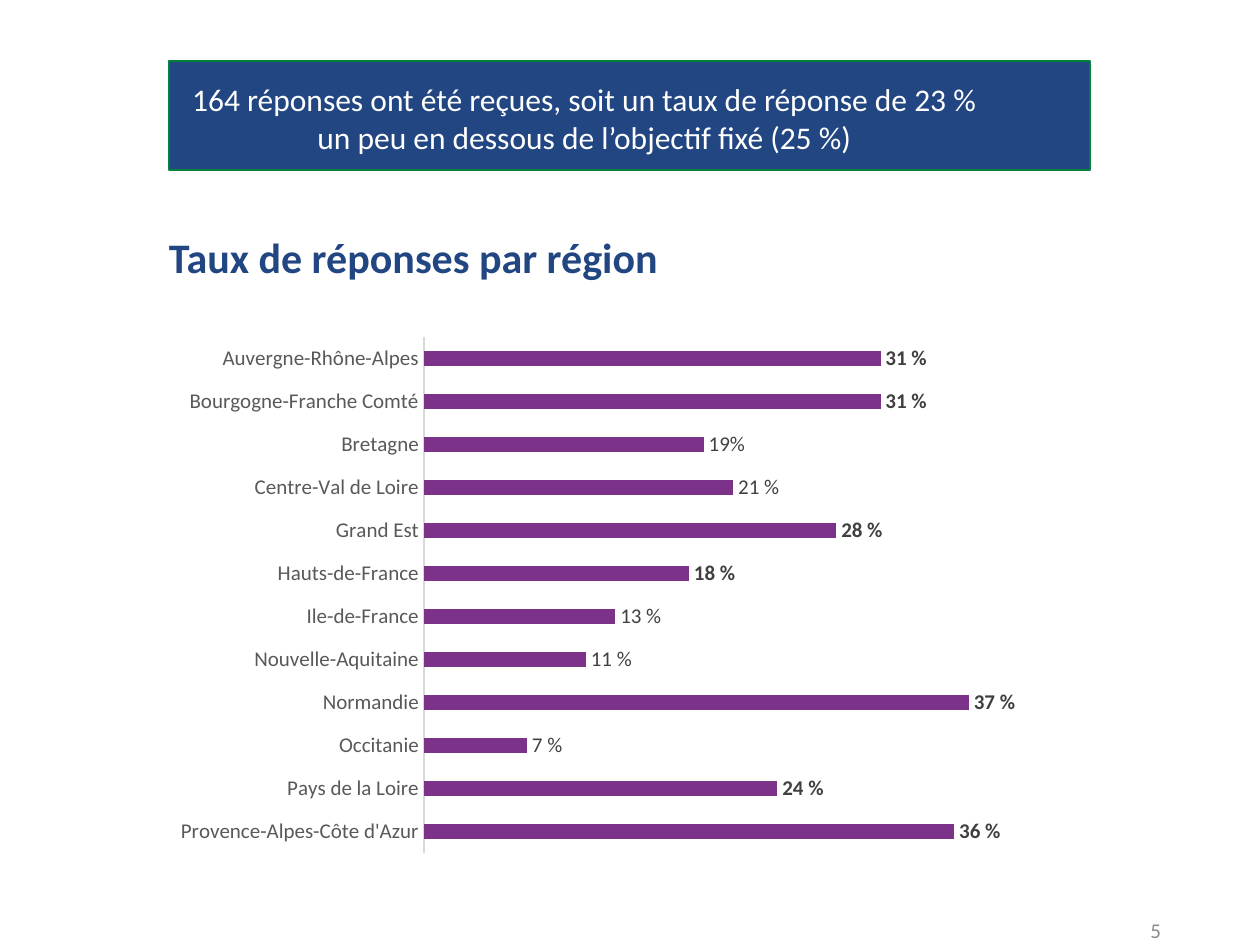
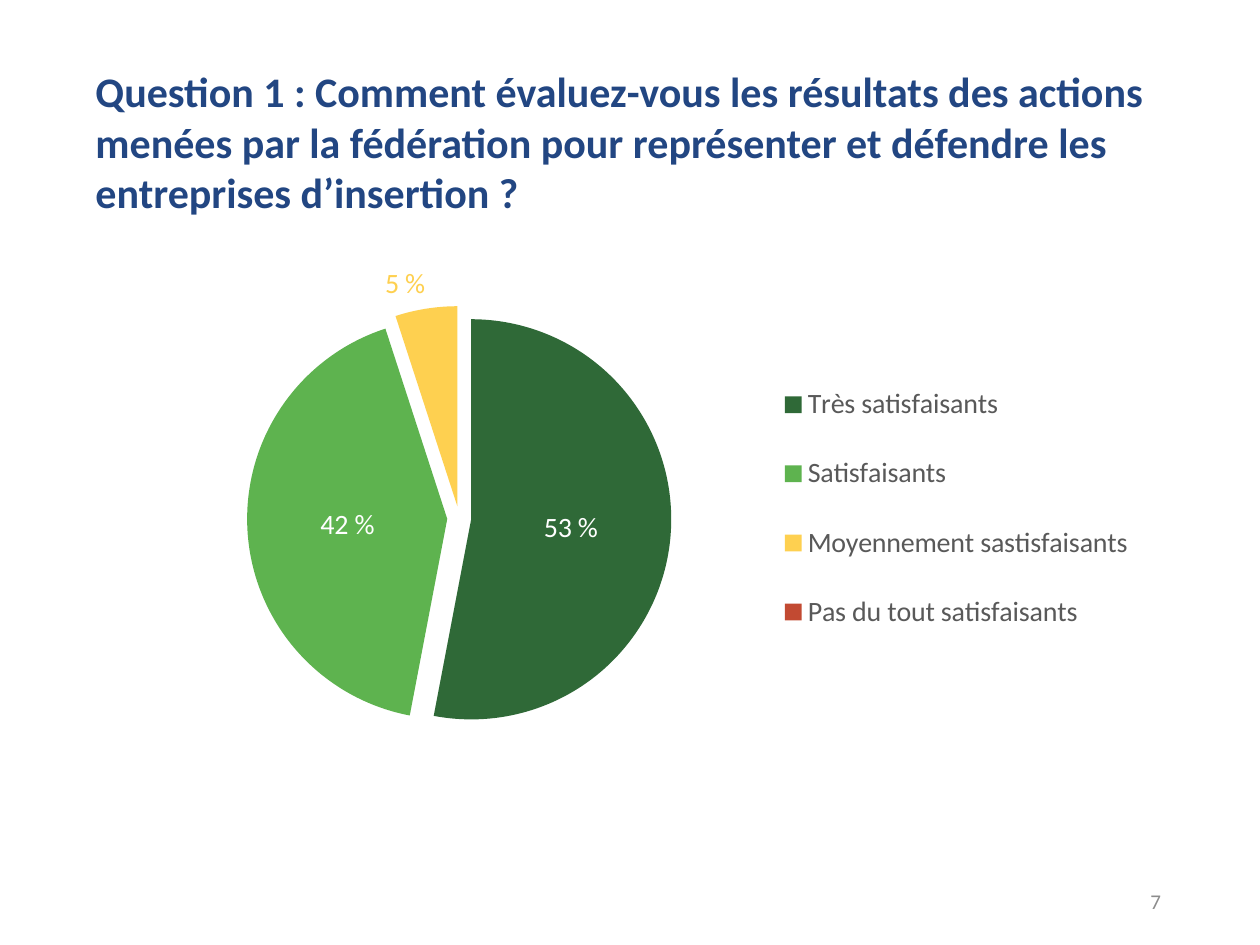
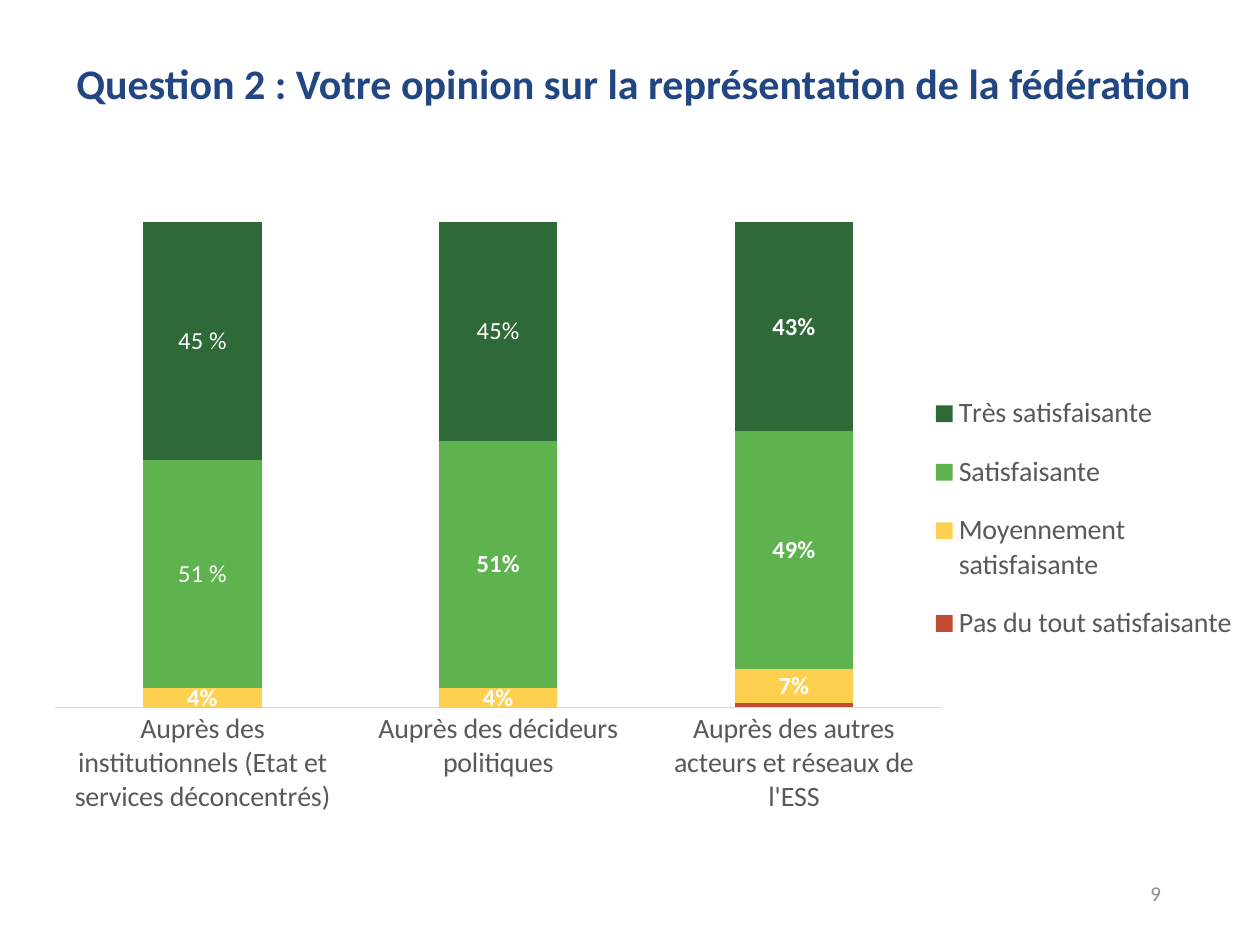
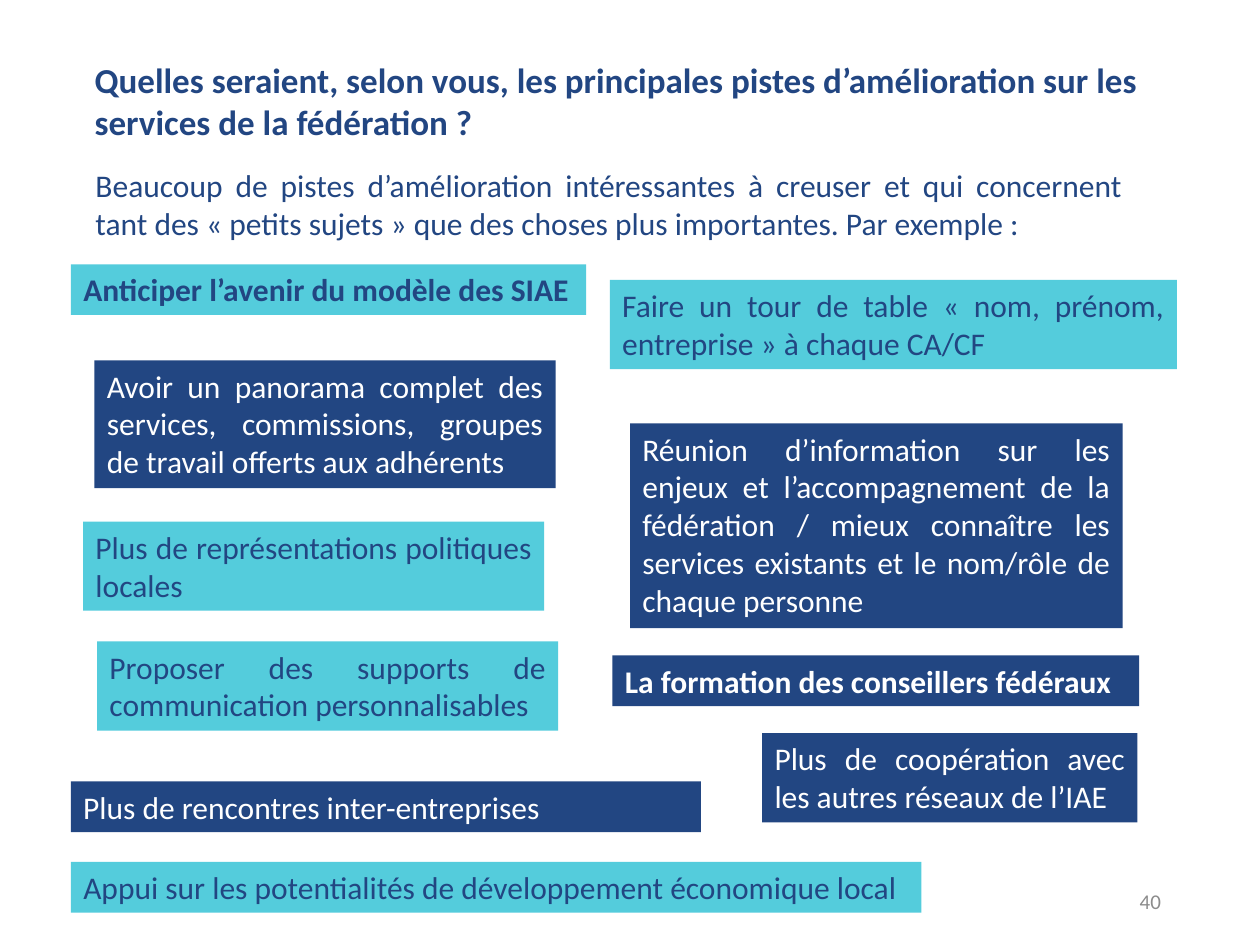
from dataclasses import dataclass

from pptx import Presentation
from pptx.chart.data import CategoryChartData
from pptx.dml.color import RGBColor
from pptx.enum.chart import (XL_CHART_TYPE, XL_LABEL_POSITION, XL_LEGEND_POSITION,
                             XL_TICK_MARK)
from pptx.enum.shapes import MSO_SHAPE
from pptx.enum.text import MSO_ANCHOR, MSO_AUTO_SIZE, PP_ALIGN
from pptx.oxml.ns import qn
from pptx.oxml.xmlchemy import OxmlElement
from pptx.util import Pt

FONT = "Calibri"
NAVY, CYAN, WHITE, BORDER = "224682", "54CCDC", "FFFFFF", "00823B"
PURPLE, GREEN, LIGHT_GREEN, YELLOW, RED = "7D3289", "2F6937", "5EB34F", "FED050", "C24A32"
GREY_TEXT, LABEL_TEXT, NUMBER_TEXT, AXIS_LINE = "595959", "404040", "8C8C8C", "D9D9D9"


@dataclass(frozen=True)
class Area:
    """A rectangle, in points on a page or as fractions of a chart."""
    left: float
    top: float
    width: float
    height: float

    def points(self) -> tuple:
        return Pt(self.left), Pt(self.top), Pt(self.width), Pt(self.height)


@dataclass(frozen=True)
class Style:
    size: float
    color: str
    bold: bool = False


@dataclass(frozen=True)
class Note:
    left: float
    top: float
    width: float
    lines: int
    text: str
    dark: bool = False
    bold: bool = False


@dataclass(frozen=True)
class Region:
    name: str
    rate: float
    label: str
    bold: bool = False


@dataclass(frozen=True)
class Rating:
    name: str
    color: str
    values: tuple
    labels: tuple = ()


TITLE = Style(24, NAVY, True)
AXIS_SMALL, AXIS_LARGE = Style(12, GREY_TEXT), Style(16, GREY_TEXT)

REGIONS = [
    Region("Auvergne-Rhône-Alpes", 0.31, "31 %", True),
    Region("Bourgogne-Franche Comté", 0.31, "31 %", True),
    Region("Bretagne", 0.19, "19%"),
    Region("Centre-Val de Loire", 0.21, "21 %"),
    Region("Grand Est", 0.28, "28 %", True),
    Region("Hauts-de-France", 0.18, "18 %", True),
    Region("Ile-de-France", 0.13, "13 %"),
    Region("Nouvelle-Aquitaine", 0.11, "11 %"),
    Region("Normandie", 0.37, "37 %", True),
    Region("Occitanie", 0.07, "7 %"),
    Region("Pays de la Loire", 0.24, "24 %", True),
    Region("Provence-Alpes-Côte d'Azur", 0.36, "36 %", True),
]

RESULTS = [
    Rating("Très satisfaisants", GREEN, (0.53,), ("53 %",)),
    Rating("Satisfaisants", LIGHT_GREEN, (0.42,), ("42 %",)),
    Rating("Moyennement sastisfaisants", YELLOW, (0.05,), ("5 %",)),
    Rating("Pas du tout satisfaisants", RED, (None,)),
]

AUDIENCES = [
    "Auprès des institutionnels (Etat et services déconcentrés)",
    "Auprès des décideurs politiques",
    "Auprès des autres acteurs et réseaux de l'ESS",
]
OPINIONS = [
    Rating("Pas du tout satisfaisante", RED, (0, 0, 0.01)),
    Rating("Moyennement satisfaisante", YELLOW, (0.04, 0.04, 0.07)),
    Rating("Satisfaisante", LIGHT_GREEN, (0.47, 0.51, 0.49), ("51 %",)),
    Rating("Très satisfaisante", GREEN, (0.49, 0.45, 0.43), ("45 %", "45%")),
]

NOTES = [
    Note(54, 206, 263.5, 3, "Avoir un panorama complet des services, commissions, "
         "groupes de travail offerts aux adhérents", dark=True),
    Note(348.5, 160, 324, 2, "Faire un tour de table « nom, prénom, entreprise » "
         "à chaque CA/CF"),
    Note(40.5, 446.5, 360, 1, "Plus de rencontres inter-entreprises", dark=True),
    Note(40.5, 151, 294.5, 1, "Anticiper l’avenir du modèle des SIAE", bold=True),
    Note(47.5, 298, 263.5, 2, "Plus de représentations politiques locales"),
    Note(360, 242, 281.5, 5, "Réunion d’information sur les enjeux et l’accompagnement "
         "de la fédération / mieux connaître les services existants et le nom/rôle "
         "de chaque personne", dark=True),
    Note(435.5, 419, 214.5, 2, "Plus de coopération avec les autres réseaux de l’IAE",
         dark=True),
    Note(350, 374.5, 301, 1, "La formation des conseillers fédéraux", dark=True, bold=True),
    Note(55.5, 366.5, 263.5, 2, "Proposer des supports de communication personnalisables"),
    Note(40.5, 492.5, 486, 1, "Appui sur les potentialités de développement économique local"),
]


def rgb(color: str) -> RGBColor:
    return RGBColor.from_string(color)


def set_font(font, style: Style) -> None:
    font.name = FONT
    font.size = Pt(style.size)
    font.bold = style.bold
    font.color.rgb = rgb(style.color)


def fill_solid(fill, color: str) -> None:
    fill.solid()
    fill.fore_color.rgb = rgb(color)


def write(box, text: str, style: Style, align=PP_ALIGN.LEFT, anchor=MSO_ANCHOR.TOP,
          grow: bool = True, wrap: bool = True) -> None:
    frame = box.text_frame
    frame.word_wrap = wrap
    frame.vertical_anchor = anchor
    frame.auto_size = MSO_AUTO_SIZE.SHAPE_TO_FIT_TEXT if grow else MSO_AUTO_SIZE.NONE
    para = frame.paragraphs[0]
    para.alignment = align
    span = para.add_run()
    span.text = text
    set_font(span.font, style)


def add_text(page, area: Area, text: str, style: Style, **options) -> None:
    write(page.shapes.add_textbox(*area.points()), text, style, **options)


def add_band(page, area: Area, color: str, border: str = ""):
    band = page.shapes.add_shape(MSO_SHAPE.RECTANGLE, *area.points())
    band.shadow.inherit = False
    fill_solid(band.fill, color)
    if border:
        band.line.color.rgb = rgb(border)
        band.line.width = Pt(1)
    else:
        band.line.fill.background()
    return band


def add_page_number(page, number: int, top: float) -> None:
    add_text(page, Area(508.5, top, 162, 29), str(number), Style(12, NUMBER_TEXT),
             align=PP_ALIGN.RIGHT, anchor=MSO_ANCHOR.MIDDLE, grow=False)


def make_layout(area: Area, inner: bool):
    """Build the manual layout element of a plot area or a legend."""
    layout = OxmlElement("c:layout")
    manual = OxmlElement("c:manualLayout")
    layout.append(manual)
    settings = [("layoutTarget", "inner")] if inner else []
    settings += [("xMode", "edge"), ("yMode", "edge"), ("x", area.left), ("y", area.top),
                 ("w", area.width), ("h", area.height)]
    for name, value in settings:
        setting = OxmlElement(f"c:{name}")
        setting.set("val", str(value))
        manual.append(setting)
    return layout


def add_chart(page, kind, area: Area, plot_area: Area, categories: list, series: list):
    data = CategoryChartData(number_format="0%")
    data.categories = categories
    for name, values in series:
        data.add_series(name, values)
    chart = page.shapes.add_chart(kind, *area.points(), data).chart
    chart.has_title = False
    chart.has_legend = False
    set_font(chart.font, Style(10, "000000"))
    plot_element = chart._chartSpace.chart.plotArea
    for layout in plot_element.findall(qn("c:layout")):
        plot_element.remove(layout)
    plot_element.insert(0, make_layout(plot_area, inner=True))
    return chart


def add_legend(chart, area: Area) -> None:
    chart.has_legend = True
    legend = chart.legend
    legend.position = XL_LEGEND_POSITION.RIGHT
    legend.include_in_layout = False
    set_font(legend.font, AXIS_LARGE)
    element = legend._element
    for layout in element.findall(qn("c:layout")):
        element.remove(layout)
    element.find(qn("c:legendPos")).addnext(make_layout(area, inner=False))


def style_axes(chart, style: Style) -> None:
    axis = chart.category_axis
    axis.major_tick_mark = axis.minor_tick_mark = XL_TICK_MARK.NONE
    axis.format.line.color.rgb = rgb(AXIS_LINE)
    axis.format.line.width = Pt(0.75)
    set_font(axis.tick_labels.font, style)
    chart.value_axis.has_major_gridlines = False
    chart.value_axis.visible = False


def show_values(series, style: Style, position) -> None:
    labels = series.data_labels
    labels.show_value = True
    labels.number_format = "0%"
    labels.number_format_is_linked = False
    labels.position = position
    set_font(labels.font, style)


def label_point(point, text: str, style: Style, position) -> None:
    label = point.data_label
    span = label.text_frame.paragraphs[0].add_run()
    span.text = text
    set_font(span.font, style)
    label.position = position


def build_region_page(page) -> None:
    add_band(page, Area(96.5, 35, 526.5, 62), NAVY, BORDER)
    regions = REGIONS[::-1]
    chart = add_chart(page, XL_CHART_TYPE.BAR_CLUSTERED, Area(92, 137.5, 511, 375),
                      Area(0.294, 0.147, 0.659, 0.786), [region.name for region in regions],
                      [("Series 1", [region.rate for region in regions])])
    style_axes(chart, AXIS_SMALL)
    chart.value_axis.minimum_scale = 0
    chart.value_axis.maximum_scale = 0.4
    plot = chart.plots[0]
    plot.gap_width = 192
    plot.vary_by_categories = False
    bars = plot.series[0]
    fill_solid(bars.format.fill, PURPLE)
    show_values(bars, Style(12, LABEL_TEXT), XL_LABEL_POSITION.OUTSIDE_END)
    for index, region in enumerate(regions):
        label_point(bars.points[index], region.label, Style(12, LABEL_TEXT, region.bold),
                    XL_LABEL_POSITION.OUTSIDE_END)
    add_text(page, Area(92, 42, 484, 51),
             "164 réponses ont été reçues, soit un taux de réponse de 23 % "
             "un peu en dessous de l’objectif fixé (25 %)",
             Style(18, WHITE), align=PP_ALIGN.CENTER)
    add_page_number(page, 5, 517)
    add_text(page, Area(89.5, 129, 296.5, 36), "Taux de réponses par région", TITLE, wrap=False)


def build_results_page(page) -> None:
    chart = add_chart(page, XL_CHART_TYPE.PIE, Area(58.5, 67, 602.5, 363.5),
                      Area(0.137, 0.297, 0.403, 0.667), [result.name for result in RESULTS],
                      [("Series 1", [result.values[0] for result in RESULTS])])
    add_legend(chart, Area(0.64, 0.37, 0.34, 0.49))
    pie = chart.plots[0].series[0]
    explosion = OxmlElement("c:explosion")
    explosion.set("val", "6")
    pie._element.find(qn("c:tx")).addnext(explosion)
    show_values(pie, Style(16, WHITE, True), XL_LABEL_POSITION.BEST_FIT)
    for index, result in enumerate(RESULTS):
        point = pie.points[index]
        fill_solid(point.format.fill, result.color)
        small = result.color == YELLOW
        for text in result.labels:
            label_point(point, text, Style(16, YELLOW if small else WHITE),
                        XL_LABEL_POSITION.OUTSIDE_END if small else XL_LABEL_POSITION.CENTER)
    add_page_number(page, 7, 500.5)
    add_text(page, Area(47.5, 34, 623, 94.5),
             "Question 1 : Comment évaluez-vous les résultats des actions menées par la "
             "fédération pour représenter et défendre les entreprises d’insertion ?", TITLE)


def build_opinion_page(page) -> None:
    chart = add_chart(page, XL_CHART_TYPE.COLUMN_STACKED_100, Area(19.5, 111, 693.5, 363.5),
                      Area(0.017, 0.044, 0.731, 0.763), AUDIENCES,
                      [(opinion.name, opinion.values) for opinion in OPINIONS])
    style_axes(chart, AXIS_LARGE)
    add_legend(chart, Area(0.735, 0.28, 0.26, 0.46))
    plot = chart.plots[0]
    plot.gap_width = 150
    plot.overlap = 100
    for series, opinion in zip(plot.series, OPINIONS):
        fill_solid(series.format.fill, opinion.color)
        if opinion.color != RED:
            show_values(series, Style(14, WHITE, True), XL_LABEL_POSITION.CENTER)
        for index, text in enumerate(opinion.labels):
            label_point(series.points[index], text, Style(14, WHITE), XL_LABEL_POSITION.CENTER)
    add_page_number(page, 9, 496)
    add_text(page, Area(36.5, 29.5, 658, 36),
             "Question 2 : Votre opinion sur la représentation de la fédération", TITLE)


def build_ideas_page(page) -> None:
    add_text(page, Area(47, 30, 623.5, 55.5),
             "Quelles seraient, selon vous, les principales pistes d’amélioration sur les "
             "services de la fédération ?", Style(20, NAVY, True))
    add_page_number(page, 40, 500.5)
    add_text(page, Area(47.5, 91.5, 601, 51),
             "Beaucoup de pistes d’amélioration intéressantes à creuser et qui concernent "
             "tant des « petits sujets » que des choses plus importantes. Par exemple :",
             Style(18, NAVY), align=PP_ALIGN.JUSTIFY)
    for note in NOTES:
        area = Area(note.left, note.top, note.width, 7 + 22 * note.lines)
        band = add_band(page, area, NAVY if note.dark else CYAN)
        write(band, note.text, Style(18, WHITE if note.dark else NAVY, note.bold),
              align=PP_ALIGN.JUSTIFY)


def main() -> None:
    deck = Presentation()
    deck.slide_width, deck.slide_height = Pt(720), Pt(540)
    for build in (build_region_page, build_results_page, build_opinion_page, build_ideas_page):
        build(deck.slides.add_slide(deck.slide_layouts[6]))
    deck.save("out.pptx")


if __name__ == "__main__":
    main()
